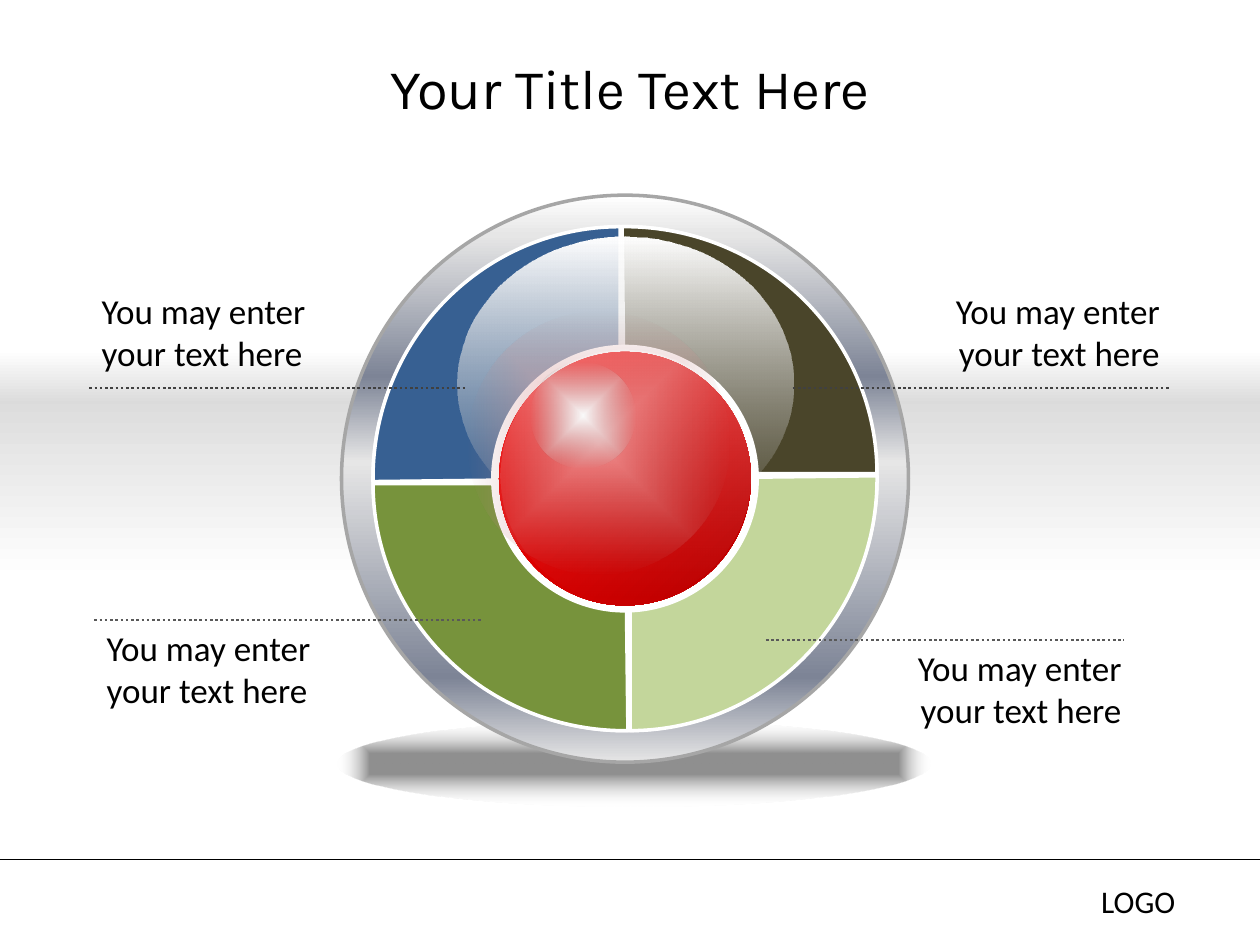
import math
from lxml import etree
from pptx import Presentation
from pptx import util as u
from pptx.dml.color import RGBColor
from pptx.enum import dml, shapes, text
from pptx.oxml.ns import qn

Cm = u.Cm
KIND = shapes.MSO_SHAPE
LEFT, MID, RIGHT = text.PP_ALIGN.LEFT, text.PP_ALIGN.CENTER, text.PP_ALIGN.RIGHT
HUB = (12.6, 9.65)  # centre of the wheel

# Gradients: stops (position, colour, opacity), then angle, or None for radial
BAND = [(0, "DDDDDD", 100), (100, "FFFFFF", 100)], 90
RISE = [(0, "DBDBDB", 100), (100, "FFFFFF", 100)], 270
SHADE = [(24, "000000", 44), (100, "FFFFFF", 0)], None
STEEL = [(0, "FFFFFF", 100), (7, "E6E6E6", 100), (32, "7D8496", 100),
         (47, "E6E6E6", 100), (85, "7D8496", 100), (100, "E6E6E6", 100)], 90
GLOSS = [(0, "FFFFFF", 100), (100, "B6B6B6", 0)], 90
RED = [(0, "FF0000", 100), (100, "B60000", 100)], 45
GLOW = [(0, "FFB3B3", 70), (100, "B68080", 0)], None
SPARK = [(0, "FFFFFF", 100), (100, "B6B6B6", 0)], None
SHEEN = [(0, "FFFFFF", 30), (100, "B6B6B6", 0)], 90

# Discs: centre, size, fill, line
BACK = [
    ((12.78, 15.39), (11.94, 1.73), SHADE, None),
    (HUB, (11.43, 11.43), STEEL, "A6A6A6"),
    (HUB, (10.16, 10.16), "FFFFFF", "FFFFFF"),
]
FRONT = [
    ((12.61, 7.73), (6.78, 5.92), GLOSS, None),
    (HUB, (5.33, 5.33), "FFFFFF", "FFFFFF"),
    (HUB, (5.08, 5.11), RED, None),
    ((12.06, 8.93), (5.28, 5.31), GLOW, None),
    ((11.75, 8.38), (2.11, 2.13), SPARK, None),
    ((12.61, 9.58), (5.05, 5.08), SHEEN, None),
]
ARCS = ["4A452A", "C3D69B", "77933C", "376092"]  # clockwise from top right

# Labels: left, top, width, align, then line from, to, height, colour
NOTE = "You may enter your text here"
LABELS = [
    (1.9, 12.5, 5.08, LEFT, 1.9, 9.73, 12.5, "595959"),
    (1.8, 5.72, 5.08, LEFT, 1.8, 9.42, 7.82, "404040"),
    (18.75, 5.72, 4.88, RIGHT, 15.98, 23.6, 7.82, "404040"),
    (17.98, 12.9, 4.88, RIGHT, 15.44, 22.65, 12.9, "595959"),
]


def rgb(code):
    return RGBColor.from_string(code)


def blend(shape, stops, angle):
    """Swap a solid fill for a gradient with opacity."""
    shape.fill.solid()
    grad = etree.Element(qn("a:gradFill"), rotWithShape="1")
    items = etree.SubElement(grad, qn("a:gsLst"))
    for pos, code, alpha in stops:
        stop = etree.SubElement(items, qn("a:gs"), pos=str(pos * 1000))
        tint = etree.SubElement(stop, qn("a:srgbClr"), val=code)
        if alpha < 100:
            etree.SubElement(tint, qn("a:alpha"), val=str(alpha * 1000))
    if angle is None:
        way = etree.SubElement(grad, qn("a:path"), {"path": "shape"})
        etree.SubElement(way, qn("a:fillToRect"),
                         {side: "50000" for side in "ltrb"})
    else:
        etree.SubElement(grad, qn("a:lin"), ang=str(angle * 60000), scaled="0")
    props = shape.element.spPr
    props.replace(props.find(qn("a:solidFill")), grad)


def draw(slide, kind, mid, size, fill, line=None):
    """Add a shape by its centre."""
    (x, y), (w, h) = mid, size
    shape = slide.shapes.add_shape(
        kind, Cm(x - w / 2), Cm(y - h / 2), Cm(w), Cm(h))
    shape.shadow.inherit = False
    if isinstance(fill, str):
        shape.fill.solid()
        shape.fill.fore_color.rgb = rgb(fill)
    else:
        blend(shape, *fill)
    if line:
        shape.line.color.rgb = rgb(line)
        shape.line.width = u.Pt(2)
    else:
        shape.line.fill.background()
    return shape


def rule(slide, x1, x2, y, code, width, dash=None):
    line = slide.shapes.add_connector(
        shapes.MSO_CONNECTOR.STRAIGHT, Cm(x1), Cm(y), Cm(x2), Cm(y))
    line.line.color.rgb = rgb(code)
    line.line.width = u.Pt(width)
    if dash:
        line.line.dash_style = dash
    etree.SubElement(line.element.spPr, qn("a:effectLst"))


def write(frame, words, size=20, font="Calibri", align=LEFT,
          anchor=text.MSO_ANCHOR.TOP):
    frame.word_wrap = True
    frame.vertical_anchor = anchor
    para = frame.paragraphs[0]
    para.alignment = align
    run = para.add_run()
    run.text = words
    run.font.size = u.Pt(size)
    run.font.name = font
    run.font.color.rgb = rgb("000000")


def label(slide, box, words, **form):
    frame = slide.shapes.add_textbox(*map(Cm, box)).text_frame
    write(frame, words, **form)


def main():
    deck = Presentation()
    deck.slide_width, deck.slide_height = Cm(25.4), Cm(19.05)
    slide = deck.slides.add_slide(deck.slide_layouts[5])

    # Title
    title = slide.shapes.title
    title.left, title.top = Cm(1.27), Cm(0.76)
    title.width, title.height = Cm(22.86), Cm(2.01)
    write(title.text_frame, "Your Title Text Here", size=32, font="Karla",
          align=MID, anchor=text.MSO_ANCHOR.MIDDLE)

    # Footer
    rule(slide, 0, 25.4, 17.32, "000000", 0.75)
    label(slide, (21.95, 17.65, 2.82, 1.02), "LOGO", size=18)

    # Grey band
    draw(slide, KIND.RECTANGLE, (12.7, 9.9), (25.4, 3.6), BAND)
    draw(slide, KIND.RECTANGLE, (12.7, 7.6), (25.4, 1.1), RISE)

    # Wheel: each quarter is pushed a little outward along its turn
    for disc in BACK:
        draw(slide, KIND.OVAL, *disc)
    for i, code in enumerate(ARCS):
        turn = math.radians(90 * i)
        mid = (HUB[0] + 0.1 * math.sin(turn), HUB[1] - 0.1 * math.cos(turn))
        arc = draw(slide, KIND.BLOCK_ARC, mid, (10.16, 9.96), code, "FFFFFF")
        arc.rotation = 90 * i
        for k, value in enumerate((161.6, 0, 0.25)):
            arc.adjustments[k] = value
    for disc in FRONT:
        draw(slide, KIND.OVAL, *disc)

    # Labels with dotted lines
    for x, y, w, align, start, end, level, code in LABELS:
        label(slide, (x, y, w, 1.96), NOTE, align=align)
        rule(slide, start, end, level, code, 1.5, dml.MSO_LINE.ROUND_DOT)

    deck.save("out.pptx")


if __name__ == "__main__":
    main()
